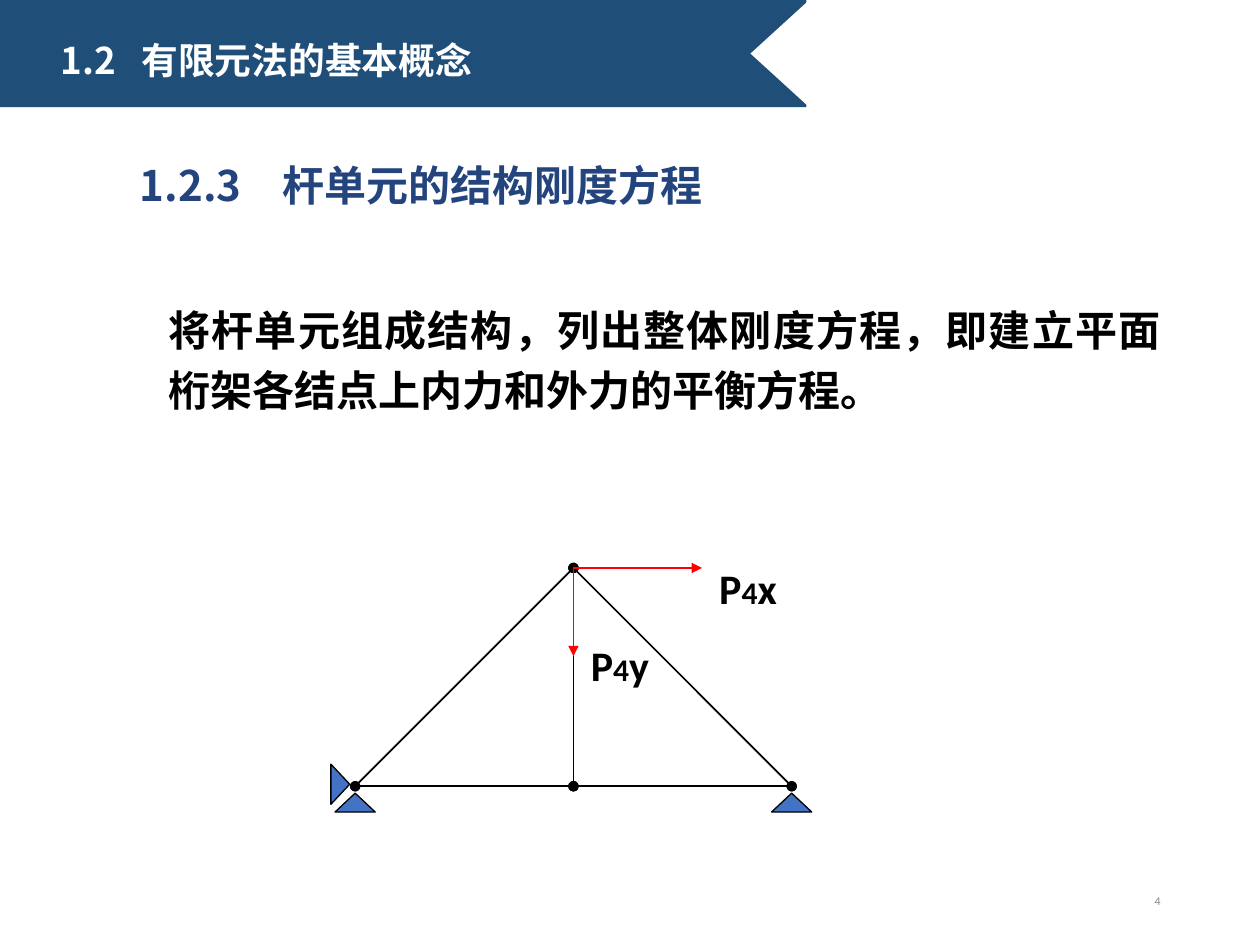
import pptx
import pptx.util
import pptx.dml.color
import pptx.enum.shapes
import pptx.enum.text
import pptx.oxml
import pptx.oxml.ns

Cm, Pt = pptx.util.Cm, pptx.util.Pt
SHAPE = pptx.enum.shapes.MSO_SHAPE
ALIGN = pptx.enum.text.PP_ALIGN
ANCHOR = pptx.enum.text.MSO_ANCHOR
CJK = "Noto Sans CJK SC"


def hue(code):
    return pptx.dml.color.RGBColor.from_string(code)


def node(tag, parent, **attrs):
    """Append a DrawingML element."""
    item = pptx.oxml.parse_xml(f"<a:{tag} {pptx.oxml.ns.nsdecls('a')}/>")
    for name, value in attrs.items():
        item.set(name, str(value))
    parent.append(item)
    return item


def write(box, text, size=24, color="000000", font=CJK, bold=True,
          align=ALIGN.LEFT, anchor=ANCHOR.TOP, wrap=True,
          left=0.25, top=0.13, line=None, tab=None):
    """Fill a box with one paragraph; text is a string or (text, size) pairs."""
    frame = box.text_frame
    frame.auto_size = pptx.enum.text.MSO_AUTO_SIZE.NONE
    frame.word_wrap = wrap
    frame.vertical_anchor = anchor
    frame.margin_left, frame.margin_right = Cm(left), Cm(0.25)
    frame.margin_top, frame.margin_bottom = Cm(top), Cm(0.13)
    para = frame.paragraphs[0]
    para.alignment = align
    if line:
        para.line_spacing = Pt(line)
    if tab:
        stops = node("tabLst", para._p.get_or_add_pPr())
        node("tab", stops, pos=int(Cm(tab)), algn="l")
    parts = [(text, size)] if isinstance(text, str) else text
    for part, points in parts:
        run = para.add_run()
        run.text = part
        run.font.name, run.font.size, run.font.bold = font, Pt(points), bold
        run.font.color.rgb = hue(color)
        node("ea", run._r.get_or_add_rPr(), typeface=font)


def label(slide, at, text, **style):
    write(slide.shapes.add_textbox(*map(Cm, at)), text, **style)


def solid(slide, kind, at, fill, edge=None, turn=0):
    shape = slide.shapes.add_shape(kind, *map(Cm, at))
    shape.shadow.inherit = False
    shape.rotation = turn
    shape.fill.solid()
    shape.fill.fore_color.rgb = hue(fill)
    if edge:
        shape.line.color.rgb = hue(edge)
        shape.line.width = Pt(0.75)
    else:
        shape.line.fill.background()


def link(slide, start, end, color="000000", head="oval", tail="oval"):
    line = slide.shapes.add_connector(
        pptx.enum.shapes.MSO_CONNECTOR.STRAIGHT, *map(Cm, start + end))
    line.line.color.rgb = hue(color)
    line.line.width = Pt(1)
    edge = line.line._get_or_add_ln()
    node("headEnd", edge, type=head)
    node("tailEnd", edge, type=tail)
    node("effectLst", line._element.spPr)


def banner(slide):
    solid(slide, SHAPE.RECTANGLE, (0, 0, 16.26, 2.16), "1F4E79")
    solid(slide, SHAPE.ISOSCELES_TRIANGLE, (14.66, 0.51, 2.08, 1.14),
          "FFFFFF", turn=270)
    title = slide.shapes.title
    title.left, title.top = Cm(0.97), Cm(0.66)
    title.width, title.height = Cm(21.59), Cm(1.27)
    write(title, "1.2\t有限元法的基本概念", size=21, color="FFFFFF",
          line=24.5, tab=1.63)
    # Bring the title in front of the banner
    title.element.getparent().append(title.element)


def truss(slide):
    mid, base, span = 11.56, 15.85, 4.4
    peak, foot = (mid, base - span), (mid, base)
    west, east = (mid - span, base), (mid + span, base)

    # Bars
    for start, end in ((peak, west), (east, peak), (peak, foot),
                       (west, foot), (foot, east)):
        link(slide, start, end)

    # Supports
    wide, high = 0.81, 0.38
    for x, y, turn in ((west[0], base + 0.32, 0),
                       (west[0] - 0.3, base - 0.04, 90),
                       (east[0], base + 0.32, 0)):
        top = y - high / 2 if turn else y - high / 2 + 0.01
        if turn:
            top = base - 0.04 - high / 2
        solid(slide, SHAPE.ISOSCELES_TRIANGLE,
              (x - wide / 2, top, wide, high), "4472C4", "000000", turn)

    # Loads at the peak
    for axis, end, at in (
            ("x", (mid + 2.59, peak[1]), (14.25, 11.2, 1.73, 1.3)),
            ("y", (mid, peak[1] + 1.78), (11.66, 12.75, 1.75, 1.3))):
        link(slide, peak, end, "FF0000", "none", "triangle")
        label(slide, at, [("P", 24), ("4", 18), (axis, 24)], font="Calibri",
              anchor=ANCHOR.MIDDLE, wrap=False)


def main():
    deck = pptx.Presentation()
    deck.slide_width, deck.slide_height = Cm(25.4), Cm(19.05)
    slide = deck.slides.add_slide(deck.slide_layouts[5])
    banner(slide)

    # Page number
    label(slide, (17.93, 17.65, 5.72, 1.02), "4", size=6.8, color="898989",
          font="Calibri", bold=False, align=ALIGN.RIGHT, anchor=ANCHOR.MIDDLE)

    # Heading and body
    label(slide, (0.36, 2.82, 24.79, 1.68), "1.2.3\t杆单元的结构刚度方程",
          color="24447E", left=2.46, top=0.2, line=34.4, tab=2.88)
    label(slide, (3.15, 5.74, 20.5, 4.37),
          "将杆单元组成结构，列出整体刚度方程，"
          "即建立平面桁架各结点上内力和外力的平衡方程。",
          align=ALIGN.JUSTIFY, top=0.2, line=34.4)

    truss(slide)
    deck.save("out.pptx")


if __name__ == "__main__":
    main()
